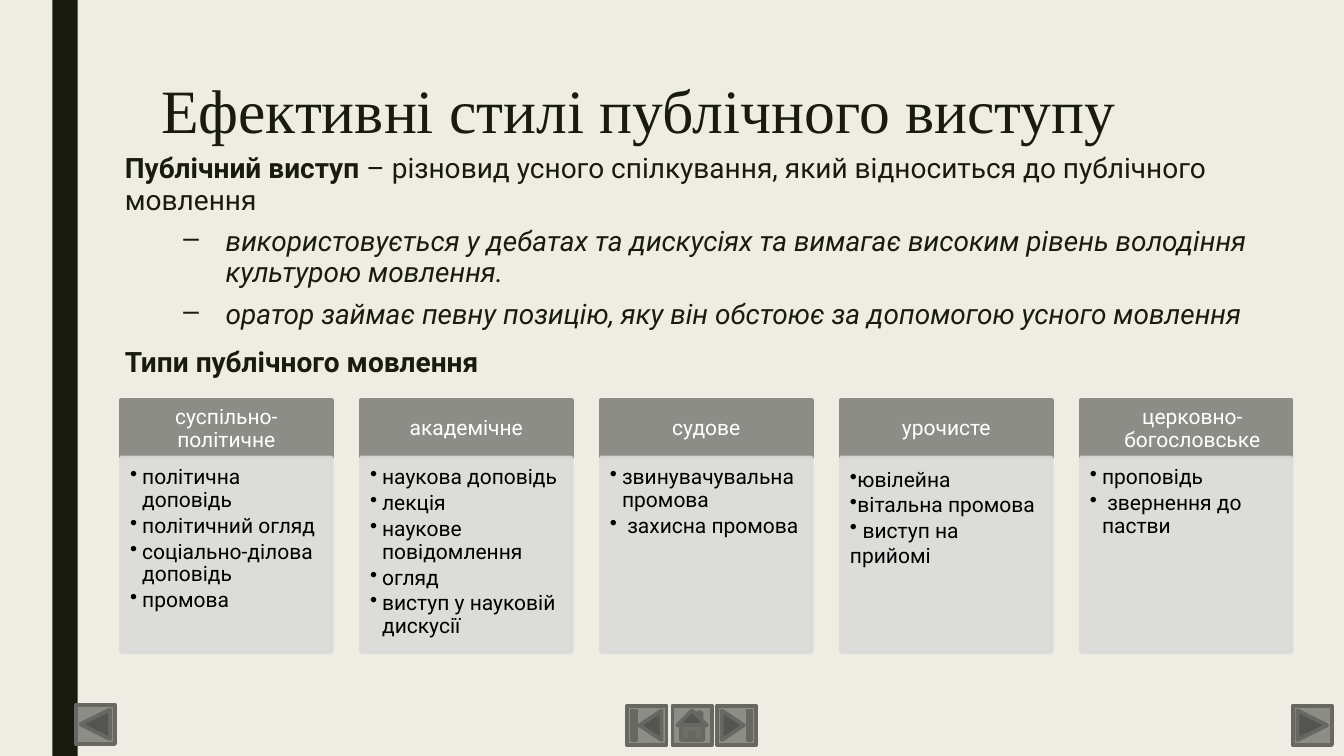
from pptx import Presentation
from pptx.dml.color import RGBColor
from pptx.enum import shapes, text
from pptx.oxml.ns import qn
from pptx.util import Inches, Pt
from lxml import etree

TITLE = "Ефективні стилі публічного виступу"
TERM = "Публічний виступ "
DEFINITION = "– різновид усного спілкування, який відноситься до публічного мовлення"
FEATURES = [
    "використовується у дебатах та дискусіях та вимагає високим рівень володіння культурою мовлення.",
    "оратор займає певну позицію, яку він обстоює за допомогою усного мовлення",
]
TYPES_HEADING = "Типи публічного мовлення"
SPEECH_TYPES = [
    ("суспільно-політичне", ["політична доповідь", "політичний огляд",
                             "соціально-ділова доповідь", "промова"]),
    ("академічне", ["наукова доповідь", "лекція", "наукове повідомлення",
                    "огляд", "виступ у науковій дискусії"]),
    ("судове", ["звинувачувальна промова", " захисна промова"]),
    ("урочисте", ["ювілейна", "вітальна промова", " виступ на прийомі"]),
    ("церковно-богословське", ["проповідь", " звернення до пастви"]),
]
FLUSH_TYPE = "урочисте"
INDENTED_HEADER = "церковно-богословське"
BUTTON = shapes.MSO_SHAPE
NAVIGATION = [
    (BUTTON.ACTION_BUTTON_BACK_OR_PREVIOUS, 0.75, 6.99),
    (BUTTON.ACTION_BUTTON_FORWARD_OR_NEXT, 12.82, 7),
    (BUTTON.ACTION_BUTTON_HOME, 6.67, 7),
    (BUTTON.ACTION_BUTTON_BEGINNING, 6.22, 7),
    (BUTTON.ACTION_BUTTON_END, 7.11, 7),
]
THEME = {
    "background": "EFEDE3", "ink": "191B0E", "header": "8C8D86", "panel": "DADBD9",
    "button_edge": "686863", "white": "FFFFFF", "black": "000000",
    "title_font": "Times New Roman", "body_font": "Roboto",
    "title_size": 44, "body_size": 20, "card_size": 15, "edge": 2.75,
}
CARD_LEFT, CARD_STEP, CARD_WIDTH = 1.2, 2.38, 2.09
HEADER_TOP, HEADER_HEIGHT, PANEL_HEIGHT = 3.97, 0.57, 1.93
BUTTON_SIZE = 0.39


def color(key):
    return RGBColor.from_string(THEME[key])


def add_box(slide, kind, area, fill, edge=None, opacity=None):
    box = slide.shapes.add_shape(kind, *map(Inches, area))
    box.shadow.inherit = False
    box.fill.solid()
    box.fill.fore_color.rgb = color(fill)
    if edge:
        box.line.color.rgb = color(edge)
        box.line.width = Pt(THEME["edge"])
    else:
        box.line.fill.background()
    if opacity:
        for tint in box._element.spPr.iter(qn("a:srgbClr")):
            etree.SubElement(tint, qn("a:alpha"), val=str(opacity * 1000))
    return box


def prepare_frame(box, insets, anchor=text.MSO_ANCHOR.TOP):
    frame = box.text_frame
    frame.word_wrap = True
    frame.vertical_anchor = anchor
    (frame.margin_left, frame.margin_top,
     frame.margin_right, frame.margin_bottom) = map(Inches, insets)
    return frame


def write(frame, parts, size, ink, font="body_font", align=text.PP_ALIGN.LEFT,
          spacing=1.0, before=0, after=0, left=0, hanging=0, bullet=None,
          bold=None, italic=None):
    started = bool(frame.paragraphs[0].runs)
    paragraph = frame.add_paragraph() if started else frame.paragraphs[0]
    for part in parts:
        paragraph.add_run().text = part
    paragraph.alignment = align
    paragraph.line_spacing = spacing
    paragraph.space_before, paragraph.space_after = Pt(before), Pt(after)
    properties = paragraph._p.get_or_add_pPr()
    properties.set("marL", str(Inches(left)))
    properties.set("indent", str(Inches(-hanging)))
    if bullet:
        etree.SubElement(properties, qn("a:buChar"), char=bullet)
    style = paragraph.font
    style.name, style.size = THEME[font], Pt(THEME[size])
    style.color.rgb = color(ink)
    style.bold, style.italic = bold, italic
    return paragraph


def add_speech_type(slide, column, name, examples):
    left = CARD_LEFT + column * CARD_STEP
    header = add_box(slide, BUTTON.RECTANGLE,
                     (left, HEADER_TOP, CARD_WIDTH, HEADER_HEIGHT), "header", "header")
    write(prepare_frame(header, (0.12, 0.07, 0.12, 0.07), text.MSO_ANCHOR.MIDDLE),
          [name], "card_size", "white", align=text.PP_ALIGN.CENTER, spacing=0.9,
          left=0.12 if name == INDENTED_HEADER else 0)
    panel = add_box(slide, BUTTON.RECTANGLE,
                    (left, HEADER_TOP + HEADER_HEIGHT, CARD_WIDTH, PANEL_HEIGHT),
                    "panel", "panel", opacity=90)
    frame = prepare_frame(panel, (0.09, 0.09, 0.12, 0.13))
    layout = {} if name == FLUSH_TYPE else dict(
        left=0.12, hanging=0.12, spacing=0.9, after=2.25)
    for example in examples:
        write(frame, [example], "card_size", "black", bullet="•", **layout)


def main():
    deck = Presentation()
    deck.slide_width, deck.slide_height = Inches(13.33), Inches(7.5)
    slide = deck.slides.add_slide(deck.slide_layouts[6])
    slide.background.fill.solid()
    slide.background.fill.fore_color.rgb = color("background")
    add_box(slide, BUTTON.RECTANGLE, (0.52, 0, 0.25, 7.5), "ink")

    insets = (0.1, 0.05, 0.1, 0.05)
    title = slide.shapes.add_textbox(*map(Inches, (1.5, 0.75, 10.5, 1.62)))
    write(prepare_frame(title, insets), [TITLE], "title_size", "ink",
          font="title_font", spacing=0.89)

    for column, (name, examples) in enumerate(SPEECH_TYPES):
        add_speech_type(slide, column, name, examples)

    overview = slide.shapes.add_textbox(*map(Inches, (1.14, 1.47, 11.62, 2.92)))
    frame = prepare_frame(overview, insets)
    body = dict(size="body_size", ink="ink", spacing=0.94, after=2)
    definition = write(frame, [TERM, DEFINITION], before=10, **body)
    definition.runs[0].font.bold = True
    for feature in FEATURES:
        write(frame, [feature], before=5, left=1, hanging=0.42, bullet="–",
              italic=True, **body)
    write(frame, [TYPES_HEADING], before=10, bold=True, **body)

    for kind, left, top in NAVIGATION:
        add_box(slide, kind, (left, top, BUTTON_SIZE, BUTTON_SIZE), "header", "button_edge")

    deck.save("out.pptx")


if __name__ == "__main__":
    main()
